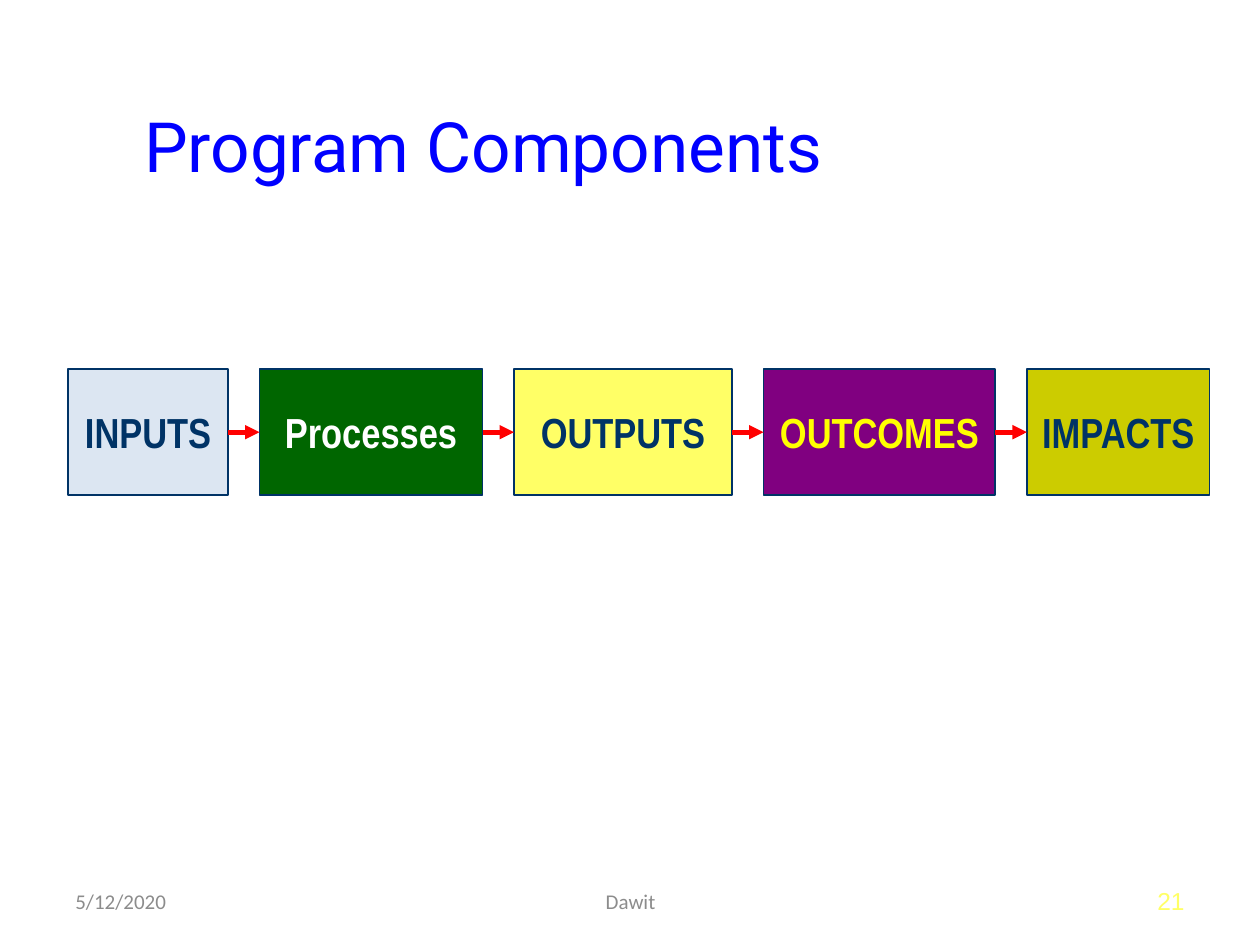
from lxml import etree
from pptx import Presentation
from pptx import util as u
from pptx.dml import color
from pptx.enum import shapes, text
from pptx.oxml import ns


def rgb(value):
    return color.RGBColor.from_string(value)


def write(shape, words, align, hex_color, **font_format):
    frame = shape.text_frame
    frame.vertical_anchor = text.MSO_ANCHOR.MIDDLE
    paragraph = frame.paragraphs[0]
    paragraph.alignment = align
    run = paragraph.add_run()
    run.text = words
    for name, value in font_format.items():
        setattr(run.font, name, value)
    run.font.color.rgb = rgb(hex_color)


LEFT, CENTER, RIGHT = text.PP_ALIGN.LEFT, text.PP_ALIGN.CENTER, text.PP_ALIGN.RIGHT

presentation = Presentation()
presentation.slide_width, presentation.slide_height = u.Inches(10), u.Inches(7.5)
slide = presentation.slides.add_slide(presentation.slide_layouts[5])

# Title: one tenth down the slide, two thirds wide
title = slide.shapes.title
title_place = {"left": 0.5, "top": 0.75, "width": 6.67, "height": 0.8}
for name, value in title_place.items():
    setattr(title, name, u.Inches(value))
title.text_frame.word_wrap = True
write(title, "Program Components", CENTER, "0000FF", name="Roboto", size=u.Pt(39.6))

# Component boxes: one row with equal gaps
ROW_TOP, ROW_HEIGHT, GAP = 2.93, 1, 0.25
components = [
    ("INPUTS", 1.27, "DCE6F2", "003366"),
    ("Processes", 1.77, "006600", "FFFFFF"),
    ("OUTPUTS", 1.73, "FFFF66", "003366"),
    ("OUTCOMES", 1.84, "800080", "FFFF00"),
    ("IMPACTS", 1.45, "CCCC00", "003366"),
]
boxes = []
left = 0.54
for label, width, fill, ink in components:
    box = slide.shapes.add_shape(
        shapes.MSO_SHAPE.RECTANGLE,
        *map(u.Inches, (left, ROW_TOP, width, ROW_HEIGHT)))
    box.shadow.inherit = False
    box.fill.solid()
    box.fill.fore_color.rgb = rgb(fill)
    box.line.color.rgb = rgb("003366")
    box.line.width = u.Pt(1)
    box.text_frame.word_wrap = False
    write(box, label, CENTER, ink, name="Arial Narrow", size=u.Pt(24), bold=True)
    boxes.append(box)
    left += width + GAP

boxes[2].text_frame.paragraphs[0].space_before = u.Pt(4.8)

# Arrows between neighbouring boxes
for source, target in zip(boxes, boxes[1:]):
    arrow = slide.shapes.add_connector(shapes.MSO_CONNECTOR.STRAIGHT, 0, 0, 0, 0)
    arrow.begin_connect(source, 3)
    arrow.end_connect(target, 1)
    arrow.line.color.rgb = rgb("FF0000")
    arrow.line.width = u.Pt(2.75)
    line = arrow.line._get_or_add_ln()
    etree.SubElement(line, ns.qn("a:tailEnd"), type="triangle")
    etree.SubElement(arrow._element.spPr, ns.qn("a:effectLst"))

# Footer: date, author and slide number
footers = [
    ("5/12/2020", 0.5, 2.33, LEFT, "8C8C8C", "Calibri", 12),
    ("Dawit", 3.42, 3.17, CENTER, "8C8C8C", "Calibri", 12),
    ("21", 7.17, 2.33, RIGHT, "FFFF66", "Arial", 14),
]
for words, left, width, align, ink, font, size in footers:
    footer = slide.shapes.add_textbox(*map(u.Inches, (left, 6.95, width, 0.4)))
    footer.text_frame.word_wrap = True
    write(footer, words, align, ink, name=font, size=u.Pt(size))

presentation.save("out.pptx")
